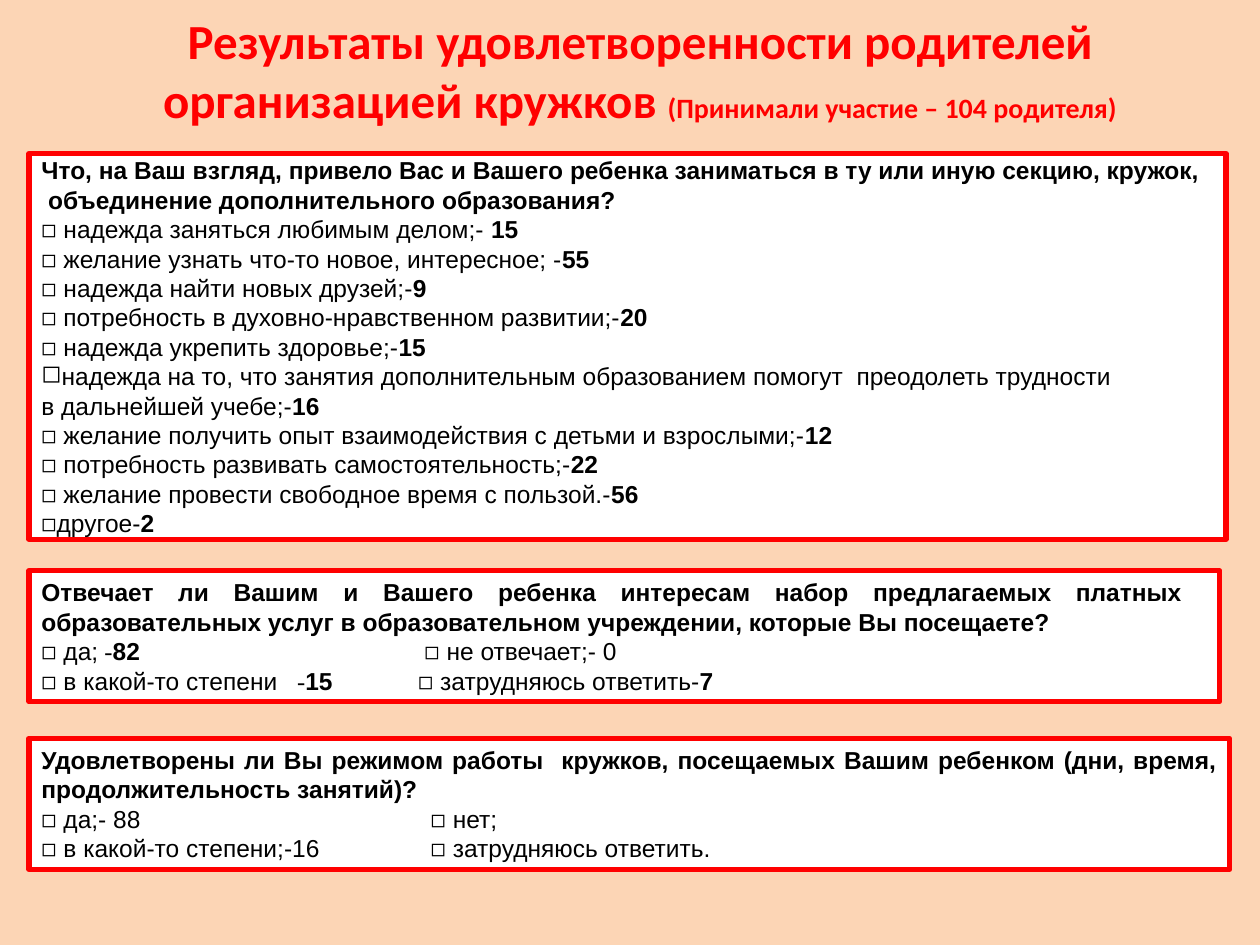
from dataclasses import dataclass

from lxml.etree import SubElement
from pptx import Presentation
from pptx.dml.color import RGBColor
from pptx.enum.shapes import MSO_SHAPE
from pptx.enum.text import MSO_ANCHOR, MSO_AUTO_SIZE, PP_ALIGN
from pptx.oxml.ns import qn
from pptx.util import Inches, Pt


@dataclass(frozen=True)
class Theme:
    background: RGBColor = RGBColor(0xFC, 0xD5, 0xB5)
    accent: RGBColor = RGBColor(0xFF, 0x00, 0x00)
    panel: RGBColor = RGBColor(0xFF, 0xFF, 0xFF)
    ink: RGBColor = RGBColor(0x00, 0x00, 0x00)
    title_font: str = "Calibri"
    body_font: str = "Arial"
    symbol_font: str = "Times New Roman"
    title_size: int = 28
    note_size: int = 16
    body_size: int = 14
    border: int = 3


THEME = Theme()
BOX = "◻"


@dataclass(frozen=True)
class Span:
    text: str
    bold: bool = False
    font: str = THEME.body_font


@dataclass(frozen=True)
class Line:
    spans: tuple[Span, ...]
    align: PP_ALIGN = PP_ALIGN.LEFT
    tabs: tuple[float, ...] = ()
    bullet: str = ""


@dataclass(frozen=True)
class Panel:
    top: float
    width: float
    height: float
    lines: tuple[Line, ...]


def question(text: str, align: PP_ALIGN = PP_ALIGN.JUSTIFY) -> Line:
    return Line((Span(text, True),), align)


def box(lead: str = "") -> Span:
    return Span(lead + BOX, font=THEME.symbol_font)


def option(label: str, votes: str) -> Line:
    return Line((box(), Span(label), Span(votes, True)))


def pair(*spans: Span, tabs: tuple[float, ...]) -> Line:
    return Line((box(), *spans), tabs=tabs)


REASONS = Panel(1.22, 9.5, 3.06, (
    question("Что, на Ваш взгляд, привело Вас и Вашего ребенка заниматься "
             "в ту или иную секцию, кружок,", PP_ALIGN.LEFT),
    question(" объединение дополнительного образования?", PP_ALIGN.LEFT),
    option(" надежда заняться любимым делом;- ", "15"),
    option(" желание узнать что-то новое, интересное; -", "55"),
    option(" надежда найти новых друзей;-", "9"),
    option(" потребность в духовно-нравственном развитии;-", "20"),
    option(" надежда укрепить здоровье;-", "15"),
    Line((Span("надежда на то, что занятия дополнительным образованием "
               "помогут  преодолеть трудности"),), bullet=BOX),
    Line((Span("в дальнейшей учебе;-"), Span("16", True))),
    option(" желание получить опыт взаимодействия с детьми и взрослыми;-", "12"),
    option(" потребность развивать самостоятельность;-", "22"),
    option(" желание провести свободное время с пользой.-", "56"),
    option("другое-", "2"),
))

INTERESTS = Panel(4.53, 9.45, 1.04, (
    question("Отвечает ли Вашим и Вашего ребенка интересам набор предлагаемых "
             "платных  образовательных услуг в образовательном учреждении, "
             "которые Вы посещаете? "),
    pair(Span(" да;"), Span(" -", font=THEME.symbol_font), Span("82", True),
         box("\t"), Span(" не отвечает;- 0"), tabs=(3.04,)),
    pair(Span(" в какой-то степени"), Span("\t-", font=THEME.symbol_font),
         Span("15", True), box("\t"), Span(" затрудняюсь ответить-"),
         Span("7", True), tabs=(2.03, 2.99)),
))

SCHEDULE = Panel(5.86, 9.53, 1.04, (
    question("Удовлетворены ли Вы режимом работы  кружков, посещаемых Вашим "
             "ребенком (дни, время, продолжительность занятий)? "),
    pair(Span(" да;- 88"), box("\t"), Span(" нет;"), tabs=(3.09,)),
    pair(Span(" в какой-то степени;-16"), box("\t"),
         Span(" затрудняюсь ответить."), tabs=(3.09,)),
))


def add_run(paragraph, text: str, font: str, size: int, color: RGBColor,
            bold: bool) -> None:
    run = paragraph.add_run()
    run.text = text
    run.font.name = font
    run.font.size = Pt(size)
    run.font.color.rgb = color
    run.font.bold = bold


def add_line(paragraph, line: Line) -> None:
    paragraph.alignment = line.align
    properties = paragraph._p.get_or_add_pPr()
    if line.bullet:
        SubElement(properties, qn("a:buChar"), char=line.bullet)
    if line.tabs:
        stops = SubElement(properties, qn("a:tabLst"))
        for stop in line.tabs:
            SubElement(stops, qn("a:tab"), pos=str(Inches(stop)), algn="l")
    for span in line.spans:
        add_run(paragraph, span.text, span.font, THEME.body_size, THEME.ink,
                span.bold)


def add_panel(slide, panel: Panel) -> None:
    frame = slide.shapes.add_shape(
        MSO_SHAPE.RECTANGLE, Inches(0.23), Inches(panel.top),
        Inches(panel.width), Inches(panel.height))
    frame.shadow.inherit = False
    frame.fill.solid()
    frame.fill.fore_color.rgb = THEME.panel
    frame.line.color.rgb = THEME.accent
    frame.line.width = Pt(THEME.border)
    body = frame.text_frame
    body.word_wrap = True
    body.vertical_anchor = MSO_ANCHOR.MIDDLE
    for index, line in enumerate(panel.lines):
        add_line(body.add_paragraph() if index else body.paragraphs[0], line)


def add_title(slide) -> None:
    title = slide.shapes.title
    title.left, title.top = Inches(0.55), Inches(0.16)
    title.width, title.height = Inches(9.06), Inches(0.78)
    title.text_frame.word_wrap = True
    title.text_frame.auto_size = MSO_AUTO_SIZE.NONE
    title.text_frame.vertical_anchor = MSO_ANCHOR.MIDDLE
    heading = title.text_frame.paragraphs[0]
    heading.alignment = PP_ALIGN.CENTER
    for text, size in (
        ("Результаты удовлетворенности родителей организацией кружков ",
         THEME.title_size),
        ("(Принимали участие – 104 родителя)", THEME.note_size),
    ):
        add_run(heading, text, THEME.title_font, size, THEME.accent, True)


def main() -> None:
    deck = Presentation()
    deck.slide_width, deck.slide_height = Inches(10), Inches(7.5)
    slide = deck.slides.add_slide(deck.slide_layouts[5])
    slide.background.fill.solid()
    slide.background.fill.fore_color.rgb = THEME.background
    add_title(slide)
    for panel in (REASONS, INTERESTS, SCHEDULE):
        add_panel(slide, panel)
    deck.save("out.pptx")


if __name__ == "__main__":
    main()
